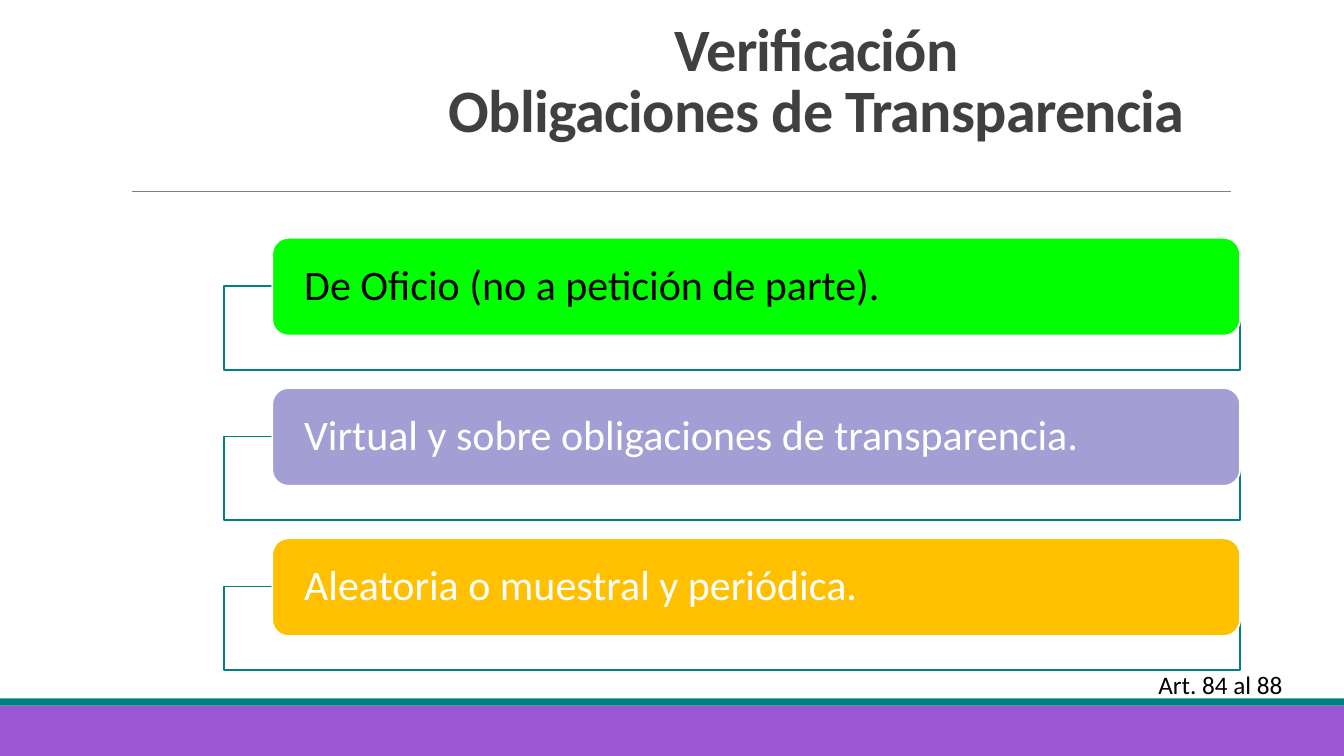
from dataclasses import dataclass

from lxml import etree
from pptx import Presentation
from pptx.dml.color import RGBColor
from pptx.enum.shapes import MSO_CONNECTOR, MSO_SHAPE
from pptx.enum.text import MSO_ANCHOR, PP_ALIGN
from pptx.oxml.ns import qn
from pptx.shapes.autoshape import Shape
from pptx.slide import Slide
from pptx.text.text import _Paragraph
from pptx.util import Inches, Pt

RECT = MSO_SHAPE.RECTANGLE
ROUNDED = MSO_SHAPE.ROUNDED_RECTANGLE
STRAIGHT = MSO_CONNECTOR.STRAIGHT
MIDDLE = MSO_ANCHOR.MIDDLE
BOTTOM = MSO_ANCHOR.BOTTOM
LEFT = PP_ALIGN.LEFT
CENTER = PP_ALIGN.CENTER

FONT = "Calibri"
COLORS = {
    "white": "FFFFFF",
    "black": "000000",
    "title": "404040",
    "rule": "808080",
    "purple": "9B57D3",
    "teal": "008080",
    "green": "00FF00",
    "lavender": "A39ED4",
    "amber": "FFC000",
}


@dataclass
class Box:
    left: float
    top: float
    width: float
    height: float


@dataclass
class Item:
    text: str
    fill: str
    color: str


ITEMS = [
    Item("De Oficio (no a petición de parte).", "green", "black"),
    Item("Virtual y sobre obligaciones de transparencia.", "lavender", "white"),
    Item("Aleatoria o muestral y periódica.", "amber", "white"),
]
FIRST_TOP = 2.36
ITEM_STEP = 1.49
FRAME_DROP = 0.48


def rgb(name: str) -> RGBColor:
    return RGBColor.from_string(COLORS[name])


def add_box(s: Slide, kind: MSO_SHAPE, box: Box, fill: str, line: str = "") -> Shape:
    sp = s.shapes.add_shape(kind, Inches(box.left), Inches(box.top),
                            Inches(box.width), Inches(box.height))
    sp.shadow.inherit = False
    sp.fill.solid()
    sp.fill.fore_color.rgb = rgb(fill)
    if line:
        sp.line.color.rgb = rgb(line)
        sp.line.width = Pt(1.25)
    else:
        sp.line.fill.background()
    return sp


def add_text(s: Slide, box: Box) -> Shape:
    sp = s.shapes.add_textbox(Inches(box.left), Inches(box.top),
                              Inches(box.width), Inches(box.height))
    sp.text_frame.word_wrap = True
    return sp


def add_run(p: _Paragraph, text: str, size: float, color: str, bold: bool = False):
    r = p.add_run()
    r.text = text
    r.font.name = FONT
    r.font.size = Pt(size)
    r.font.bold = bold
    r.font.color.rgb = rgb(color)
    return r


def add_title(s: Slide) -> None:
    tf = add_text(s, Box(2.86, 0.64, 10.48, 0.85)).text_frame
    tf.vertical_anchor = BOTTOM
    p = tf.paragraphs[0]
    p.alignment = CENTER
    p.line_spacing = 0.85
    for i, text in enumerate(("Verificación", "Obligaciones de Transparencia")):
        if i:
            p.add_line_break()
        r = add_run(p, text, 43, "title", True)
        r.font._element.set("spc", "-50")


def add_rule(s: Slide) -> None:
    line = s.shapes.add_connector(STRAIGHT, Inches(1.31), Inches(1.9),
                                  Inches(12.21), Inches(1.9))
    line.line.color.rgb = rgb("rule")
    line.line.width = Pt(0.5)
    etree.SubElement(line._element.spPr, qn("a:effectLst"))


def add_item(s: Slide, item: Item, top: float) -> None:
    frame = add_box(s, RECT, Box(2.22, top + FRAME_DROP, 10.08, 0.83), "white", "teal")
    white = frame._element.spPr.find(qn("a:solidFill")).find(qn("a:srgbClr"))
    etree.SubElement(white, qn("a:alpha")).set("val", "90000")

    sp = add_box(s, ROUNDED, Box(2.7, top, 9.6, 0.97), item.fill, "white")
    tf = sp.text_frame
    tf.word_wrap = True
    tf.vertical_anchor = MIDDLE
    tf.margin_left = tf.margin_right = Inches(0.27)
    tf.margin_top = tf.margin_bottom = 0
    p = tf.paragraphs[0]
    p.alignment = LEFT
    p.line_spacing = 0.9
    add_run(p, item.text, 30, item.color)


def add_article_note(s: Slide) -> None:
    p = add_text(s, Box(11.29, 6.59, 1.63, 0.4)).text_frame.paragraphs[0]
    p.alignment = CENTER
    add_run(p, "Art. 84 al 88", 18, "black")


def main() -> None:
    prs = Presentation()
    prs.slide_width = Inches(13.33)
    prs.slide_height = Inches(7.5)
    s = prs.slides.add_slide(prs.slide_layouts[6])
    add_box(s, RECT, Box(0, 7, 13.33, 0.5), "purple")
    add_box(s, RECT, Box(0, 6.93, 13.33, 0.07), "teal")
    add_rule(s)
    add_title(s)
    for i, item in enumerate(ITEMS):
        add_item(s, item, FIRST_TOP + i * ITEM_STEP)
    add_article_note(s)
    prs.save("out.pptx")


if __name__ == "__main__":
    main()
